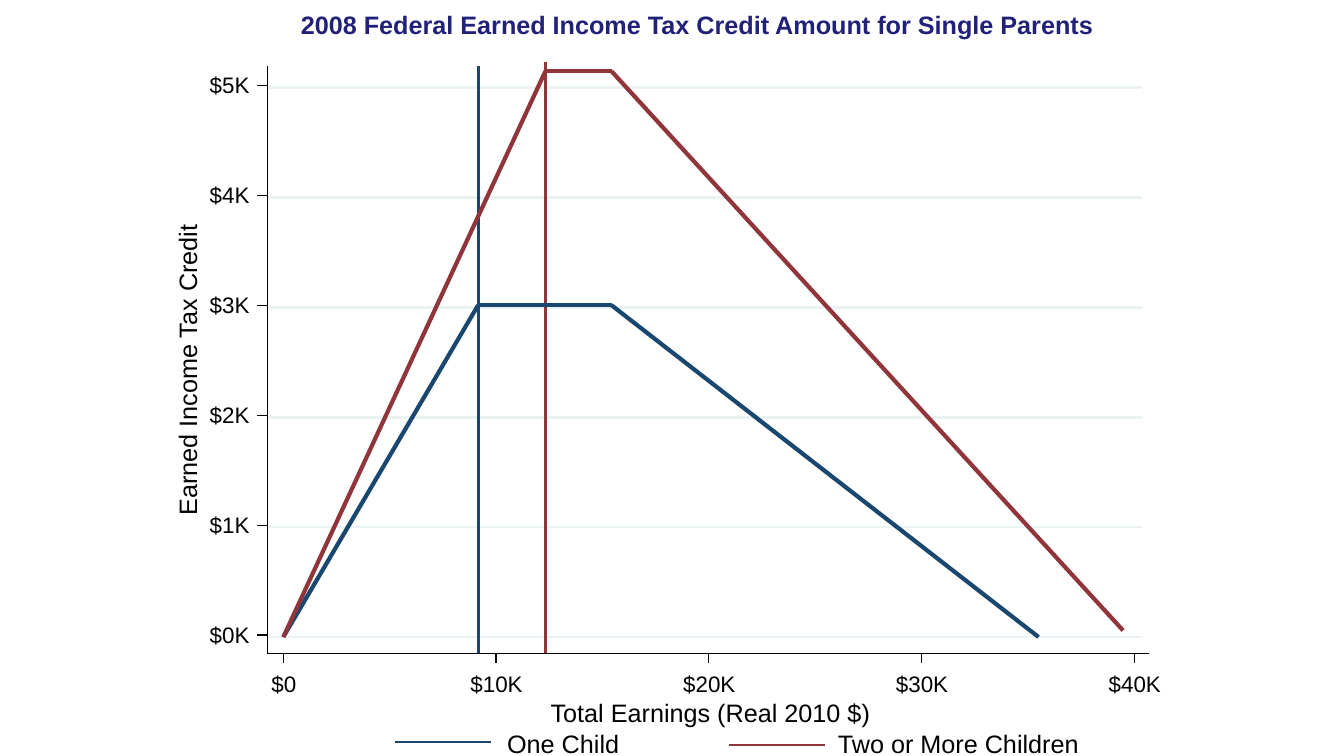
from pptx import Presentation
from pptx.dml.color import RGBColor
from pptx.enum.shapes import MSO_CONNECTOR
from pptx.enum.text import MSO_ANCHOR, MSO_AUTO_SIZE, PP_ALIGN
from pptx.oxml.ns import qn
from pptx.util import Inches, Pt
from lxml import etree

STRAIGHT = MSO_CONNECTOR.STRAIGHT
LEFT, CENTER = PP_ALIGN.LEFT, PP_ALIGN.CENTER
TOP, MIDDLE = MSO_ANCHOR.TOP, MSO_ANCHOR.MIDDLE
NO_AUTOFIT = MSO_AUTO_SIZE.NONE

COLORS = {"black": "000000", "title": "212179", "grid": "EAF2F3",
          "one": "1A476F", "two": "90353B"}
TITLE = "2008 Federal Earned Income Tax Credit Amount for Single Parents"
X_TITLE = "Total Earnings (Real 2010 $)"
Y_TITLE = "Earned Income Tax Credit"
X_LABELS = ["$0", "$10K", "$20K", "$30K", "$40K"]
Y_LABELS = ["$0K", "$1K", "$2K", "$3K", "$4K", "$5K"]
CREDITS = [
    {"color": "one", "points": [(0, 0), (9.2, 3.02), (15.5, 3.02), (35.67, 0)]},
    {"color": "two", "points": [(0, 0), (12.38, 5.15), (15.5, 5.15), (39.66, 0.06)]},
]
THRESHOLDS = [("two", 12.38, 0.62), ("one", 9.2, 0.65)]
LEGEND = [("One Child", "one", 3.92, 7.36, 5.03, 1.12),
          ("Two or More Children", "two", 7.23, 7.39, 8.31, 2.41)]

AXIS_LEFT, AXIS_RIGHT, AXIS_TOP, AXIS_BOTTOM = 2.65, 11.4, 0.65, 6.48
GRID_RIGHT = 11.33
ORIGIN_X, ORIGIN_Y = 2.81, 6.32
X_PER_K, Y_PER_K = 0.21, 1.09
TICK = 0.1


def x_at(earnings):
    return ORIGIN_X + earnings * X_PER_K


def y_at(credit):
    return ORIGIN_Y - credit * Y_PER_K


def add_line(slide, start, end, color, width):
    line = slide.shapes.add_connector(
        STRAIGHT, *(Inches(value) for value in (*start, *end)))
    line.line.color.rgb = RGBColor.from_string(COLORS[color])
    line.line.width = Pt(width)
    etree.SubElement(line._element.spPr, qn("a:effectLst"))


def format_text(shape, text, size, color="black", bold=False,
                align=LEFT, anchor=TOP, wrap=False):
    frame = shape.text_frame
    frame.text = text
    frame_format = {"margin_left": 0, "margin_right": 0, "margin_top": 0,
                    "margin_bottom": 0, "word_wrap": wrap,
                    "vertical_anchor": anchor, "auto_size": NO_AUTOFIT}
    for name, value in frame_format.items():
        setattr(frame, name, value)
    paragraph = frame.paragraphs[0]
    paragraph.alignment = align
    font = paragraph.runs[0].font
    for name, value in {"name": "Arial", "size": Pt(size), "bold": bold}.items():
        setattr(font, name, value)
    font.color.rgb = RGBColor.from_string(COLORS[color])


def add_label(slide, box, text, size, **text_format):
    shape = slide.shapes.add_textbox(*(Inches(value) for value in box))
    format_text(shape, text, size, **text_format)
    return shape


def add_title(slide):
    title = slide.shapes.title
    place = {"left": 2.33, "top": 0.08, "width": 9.17, "height": 0.33}
    for name, value in place.items():
        setattr(title, name, Inches(value))
    format_text(title, TITLE, 18, color="title", bold=True,
                align=CENTER, anchor=MIDDLE, wrap=True)


def add_axes(slide):
    for credit in range(len(Y_LABELS)):
        y = y_at(credit)
        add_line(slide, (AXIS_LEFT, y), (GRID_RIGHT, y), "grid", 1.75)
    for credit, label in enumerate(Y_LABELS):
        y = y_at(credit) - 0.02
        add_line(slide, (AXIS_LEFT, y), (AXIS_LEFT - TICK, y), "black", 0.88)
        add_label(slide, (2.08, y - 0.14, 0.4, 0.27), label, 16)
    for index, label in enumerate(X_LABELS):
        x = x_at(index * 10) + index * 0.01
        add_line(slide, (x, AXIS_BOTTOM), (x, AXIS_BOTTOM + TICK), "black", 0.88)
        add_label(slide, (x - 0.26, 6.65, 0.53, 0.27), label, 16, align=CENTER)
    corner = (AXIS_LEFT, AXIS_BOTTOM)
    add_line(slide, corner, (AXIS_LEFT, AXIS_TOP), "black", 0.88)
    add_line(slide, corner, (AXIS_RIGHT, AXIS_BOTTOM), "black", 0.88)
    add_label(slide, (2.67, 6.92, 8.75, 0.3), X_TITLE, 18, align=CENTER, wrap=True)
    y_title = add_label(slide, (-0.98, 3.52, 5.67, 0.3), Y_TITLE, 18,
                        align=CENTER, wrap=True)
    y_title.rotation = 270


def add_credits(slide):
    for color, earnings, top in THRESHOLDS:
        x = x_at(earnings)
        add_line(slide, (x, AXIS_BOTTOM), (x, top), color, 2.25)
    for credit in CREDITS:
        corners = [(x_at(x), y_at(y)) for x, y in credit["points"]]
        for start, end in zip(corners, corners[1:]):
            add_line(slide, start, end, credit["color"], 3)


def add_legend(slide):
    for text, color, x, y, text_left, width in LEGEND:
        add_line(slide, (x, y), (x + 0.95, y), color, 1.75)
        add_label(slide, (text_left, 7.23, width, 0.3), text, 18)


def main():
    presentation = Presentation()
    presentation.slide_width = Inches(13.33)
    presentation.slide_height = Inches(7.5)
    slide = presentation.slides.add_slide(presentation.slide_layouts[5])
    add_title(slide)
    add_axes(slide)
    add_credits(slide)
    add_legend(slide)
    presentation.save("out.pptx")


if __name__ == "__main__":
    main()
